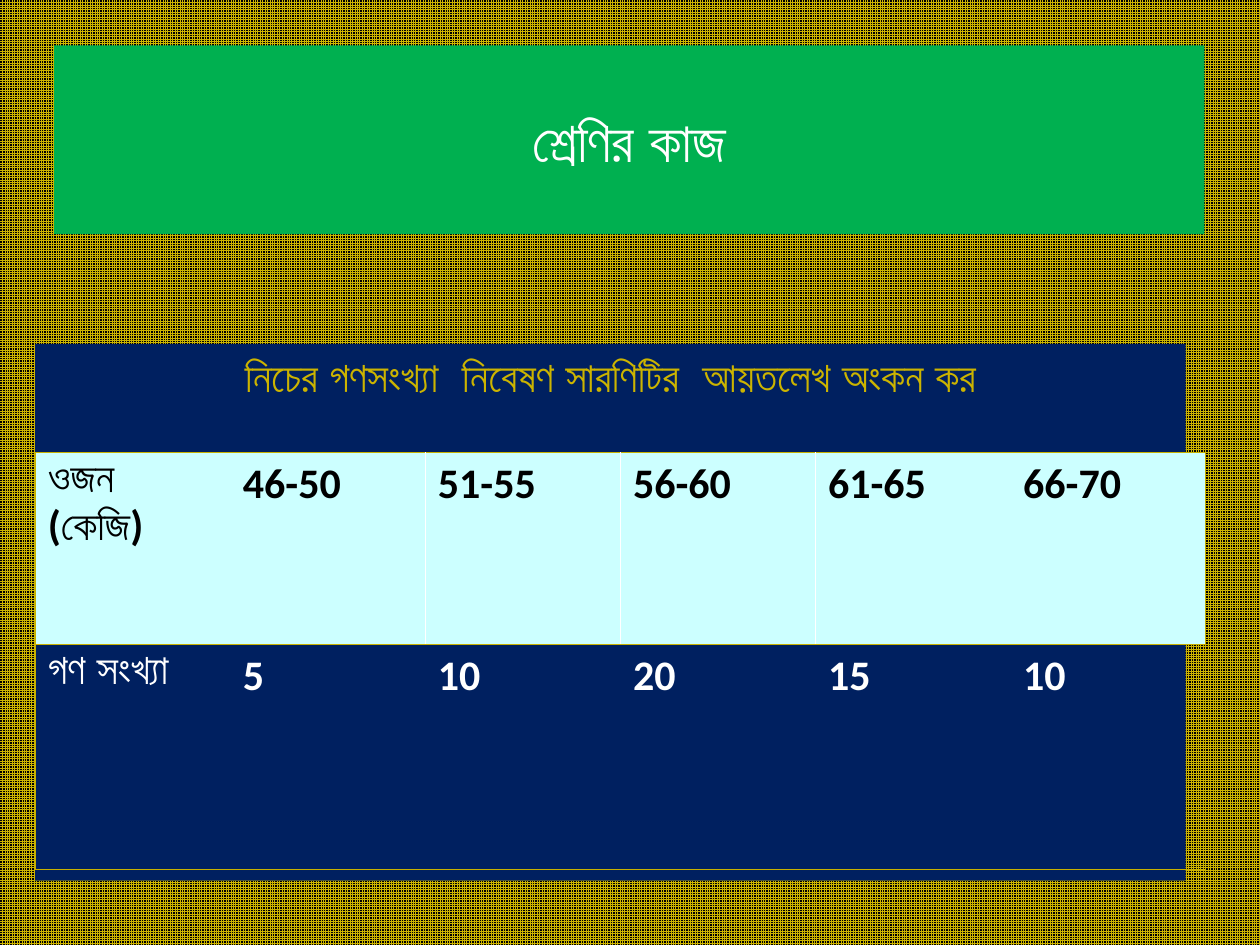
from lxml import etree
from pptx import Presentation
from pptx import util as u
from pptx.dml.color import RGBColor
from pptx.enum import dml, shapes, text
from pptx.oxml.ns import qn

GOLD, NAVY, GREEN = "C8B000", "002060", "00B050"
CYAN, WHITE, BLACK = "CCFFFF", "FFFFFF", "000000"
PLAIN = "{2D5ABB26-0587-4C30-8999-92F81FD0307C}"  # table style without grid


def rgb(code):
    return RGBColor.from_string(code)


class Deck:
    """Holds the style and the current slide; lengths are shares of its size."""

    font, size = "Calibri", 24

    def __init__(self, wide, high):
        self.prs = Presentation()
        self.prs.slide_width = u.Inches(wide)
        self.prs.slide_height = u.Inches(high)
        self.slide = self.prs.slides.add_slide(self.prs.slide_layouts[6])

    def place(self, x, y, w, h):
        wide, high = self.prs.slide_width, self.prs.slide_height
        return [u.Emu(int(n)) for n in (x * wide, y * high, w * wide, h * high)]

    def backdrop(self, fore, back):
        fill = self.slide.background.fill
        fill.patterned()
        fill.pattern = dml.MSO_PATTERN.SMALL_GRID
        fill.fore_color.rgb, fill.back_color.rgb = rgb(fore), rgb(back)

    def label(self, frame, words, color, align, size=None, font=None):
        frame.text = words
        for para in frame.paragraphs:
            para.alignment = align
            for run in para.runs:
                run.font.name = font or self.font
                run.font.size = u.Pt(size or self.size)
                run.font.bold = True
                run.font.color.rgb = rgb(color)

    def panel(self, box, fill, words, color, anchor, **style):
        shape = self.slide.shapes.add_shape(
            shapes.MSO_SHAPE.RECTANGLE, *self.place(*box))
        shape.shadow.inherit = False
        shape.fill.solid()
        shape.fill.fore_color.rgb = rgb(fill)
        shape.line.fill.background()
        frame = shape.text_frame
        frame.word_wrap = True
        frame.vertical_anchor = anchor
        self.label(frame, words, color, text.PP_ALIGN.CENTER, **style)
        return frame

    def edge(self, cell, side, color, width):
        line = etree.SubElement(cell._tc.get_or_add_tcPr(), qn("a:ln" + side),
                                w=str(u.Pt(width)))
        fill = etree.SubElement(line, qn("a:solidFill"))
        etree.SubElement(fill, qn("a:srgbClr"), val=color)

    def table(self, box, rows, shares, fills, inks, rules):
        """Draw a table framed in gold; rules are the columns with a white line after."""
        last = len(rows[0]) - 1
        place = self.place(*box)
        grid = self.slide.shapes.add_table(len(rows), last + 1, *place).table
        grid._tbl.tblPr.find(qn("a:tableStyleId")).text = PLAIN
        grid.first_row = grid.horz_banding = False
        for r, row in enumerate(rows):
            grid.rows[r].height = u.Emu(int(place[3] * shares[r]))
            for c, words in enumerate(row):
                cell = grid.cell(r, c)
                self.label(cell.text_frame, words, inks[r], text.PP_ALIGN.LEFT)
                ruled = r == 0
                if c == 0:
                    self.edge(cell, "L", GOLD, 0.75)
                elif ruled and c - 1 in rules:
                    self.edge(cell, "L", WHITE, 1)
                if c == last:
                    self.edge(cell, "R", GOLD, 0.75)
                elif ruled and c in rules:
                    self.edge(cell, "R", WHITE, 1)
                self.edge(cell, "T", GOLD, 0.75)
                self.edge(cell, "B", GOLD, 0.75)
                if fills[r]:
                    cell.fill.solid()
                    cell.fill.fore_color.rgb = rgb(fills[r])
                else:
                    cell.fill.background()

    def save(self):
        self.prs.save("out.pptx")


def main():
    deck = Deck(10, 7.5)
    deck.backdrop("CCB400", BLACK)
    deck.panel((0.043, 0.048, 0.913, 0.2), GREEN, "শ্রেণির কাজ", WHITE,
               text.MSO_ANCHOR.MIDDLE, size=32, font="Lato")
    task = deck.panel((0.028, 0.364, 0.913, 0.568), NAVY,
                      "নিচের গণসংখ্যা  নিবেষণ সারণিটির  আয়তলেখ অংকন কর",
                      "CCB400", text.MSO_ANCHOR.TOP)
    task.paragraphs[0].space_before = u.Pt(4.8)
    rows = [
        ["ওজন\n(কেজি)", "46-50", "51-55", "56-60", "61-65", "66-70"],
        ["গণ সংখ্যা", "5", "10", "20", "15", "10"],
    ]
    deck.table((0.028, 0.479, 0.929, 0.441), rows, shares=(0.46, 0.54),
               fills=(CYAN, None), inks=(BLACK, WHITE), rules=(1, 2))
    deck.save()


if __name__ == "__main__":
    main()
